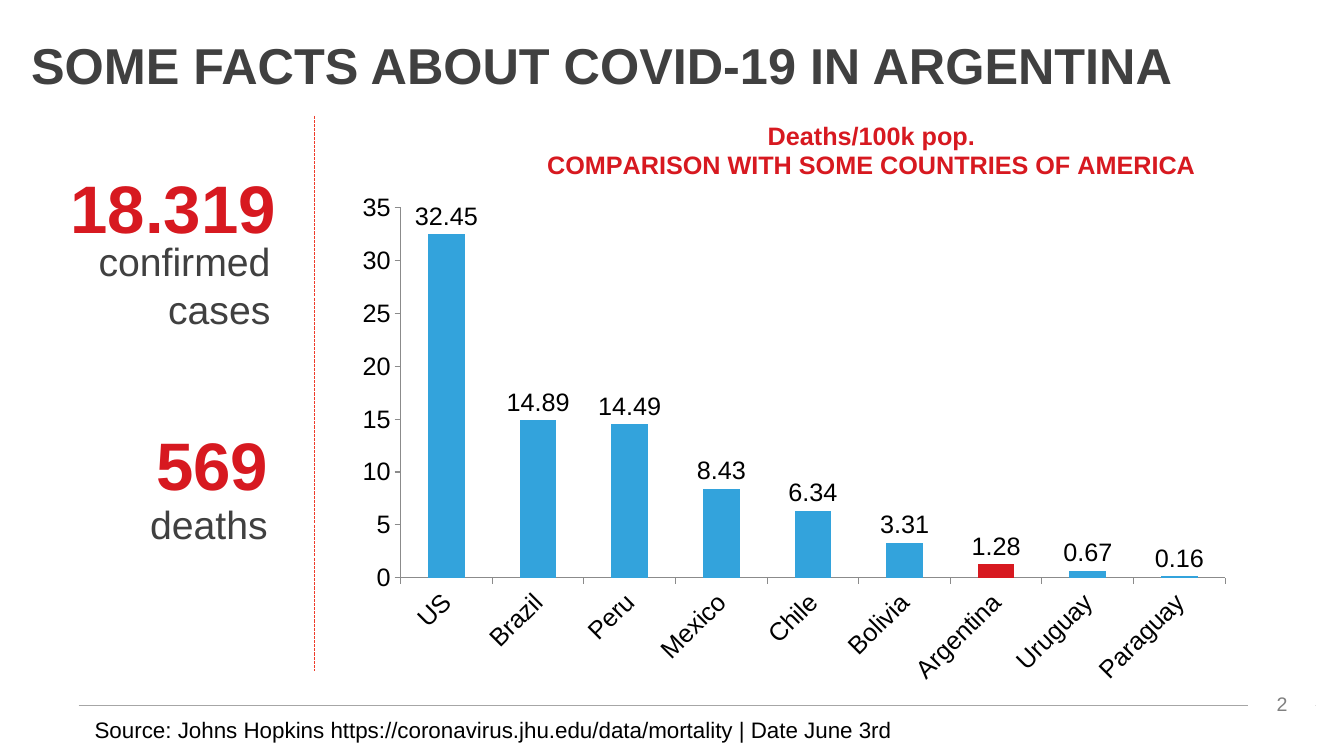
from dataclasses import dataclass
from lxml.etree import SubElement
from pptx import Presentation
from pptx.chart.data import CategoryChartData
from pptx.dml.color import RGBColor
from pptx.enum.chart import XL_CHART_TYPE, XL_LABEL_POSITION, XL_TICK_MARK
from pptx.enum.dml import MSO_LINE
from pptx.enum.shapes import MSO_CONNECTOR, MSO_SHAPE
from pptx.enum.text import MSO_ANCHOR, PP_ALIGN
from pptx.oxml import parse_xml
from pptx.oxml.ns import nsdecls, qn
from pptx.util import Inches, Pt


@dataclass(frozen=True)
class Theme:
    font: str = "Arial"
    red: str = "D71920"
    blue: str = "33A3DC"
    dark: str = "404040"
    black: str = "000000"
    white: str = "FFFFFF"
    gray: str = "808080"
    rule: str = "A6A6A6"
    axis: str = "8B8B8B"
    dash: str = "EE3C2A"
    head: int = 36
    fact: int = 48
    unit: int = 28
    chart: int = 18
    note: int = 16
    page: int = 14


T = Theme()
RATES = {
    "US": 32.45, "Brazil": 14.89, "Peru": 14.49, "Mexico": 8.43,
    "Chile": 6.34, "Bolivia": 3.31, "Argentina": 1.28,
    "Uruguay": 0.67, "Paraguay": 0.16,
}


def color(code):
    return RGBColor.from_string(code)


def style(font, size, code, bold=False):
    font.name, font.size, font.bold = T.font, Pt(size), bold
    font.color.rgb = color(code)


def write(frame, text, size, code, bold=False, align=PP_ALIGN.LEFT):
    frame.text = text
    frame.paragraphs[0].alignment = align
    style(frame.paragraphs[0].runs[0].font, size, code, bold)


def add_text(slide, box, text, size, code, bold=False, align=PP_ALIGN.LEFT, wrap=False):
    frame = slide.shapes.add_textbox(*map(Inches, box)).text_frame
    frame.word_wrap = wrap
    write(frame, text, size, code, bold, align)


def add_line(slide, start, end, code, dash=None):
    line = slide.shapes.add_connector(
        MSO_CONNECTOR.STRAIGHT, *map(Inches, start + end))
    line.line.color.rgb = color(code)
    line.line.width = Pt(0.75)
    if dash:
        line.line.dash_style = dash
    SubElement(line.element.spPr, qn("a:effectLst"))


def add_facts(slide, box):
    x, y, w, h = box
    # Each count stands above its unit
    add_text(slide, (x, y, 2.27, 0.91), "18.319", T.fact, T.red, True)
    add_text(slide, (x + 0.16, y + 0.71, 2.02, 1.04), "confirmed cases",
             T.unit, T.dark, align=PP_ALIGN.RIGHT, wrap=True)
    add_text(slide, (x + 0.85, y + 2.55, 1.33, 0.91), "569", T.fact, T.red, True)
    add_text(slide, (x + 0.79, y + 3.31, 1.38, 0.57), "deaths", T.unit, T.dark)
    # Divider on the right edge
    add_line(slide, (x + w, y - 0.45), (x + w, y - 0.45 + h), T.dash, MSO_LINE.SQUARE_DOT)


def make_layout(inner="", **sides):
    parts = "".join(f'<c:{key}Mode val="edge"/>' for key in "xy")
    parts += "".join(f'<c:{key} val="{val}"/>' for key, val in sides.items())
    return parse_xml(f'<c:layout {nsdecls("c")}><c:manualLayout>{inner}{parts}'
                     '</c:manualLayout></c:layout>')


def put_layout(parent, index, layout):
    for old in parent.findall(qn("c:layout")):
        parent.remove(old)
    parent.insert(index, layout)


def add_rates(slide, box):
    data = CategoryChartData()
    data.categories = list(RATES)
    data.add_series("Series 1", list(RATES.values()))
    chart = slide.shapes.add_chart(
        XL_CHART_TYPE.COLUMN_CLUSTERED, *map(Inches, box), data).chart
    style(chart.font, T.chart, T.black)
    chart.has_legend = False

    # Title
    chart.has_title = True
    frame = chart.chart_title.text_frame
    frame.text = "Deaths/100k pop.\nCOMPARISON WITH SOME COUNTRIES OF AMERICA"
    for para in frame.paragraphs:
        style(para.runs[0].font, T.chart, T.red, True)
    chart.chart_title.include_in_layout = False

    # Columns
    plot = chart.plots[0]
    plot.gap_width = 150
    plot.vary_by_categories = False
    bars = plot.series[0]
    bars.invert_if_negative = False
    bars.format.fill.solid()
    bars.format.fill.fore_color.rgb = color(T.blue)
    home = bars.points[list(RATES).index("Argentina")].format.fill
    home.solid()
    home.fore_color.rgb = color(T.red)
    labels = bars.data_labels
    labels.show_value = True
    labels.position = XL_LABEL_POSITION.OUTSIDE_END
    style(labels.font, T.chart, T.black)

    # Axes
    for axis in (chart.category_axis, chart.value_axis):
        axis.has_major_gridlines = False
        axis.major_tick_mark = XL_TICK_MARK.OUTSIDE
        axis.minor_tick_mark = XL_TICK_MARK.NONE
        axis.format.line.color.rgb = color(T.axis)
        axis.format.line.width = Pt(0.75)
        style(axis.tick_labels.font, T.chart, T.black)
    scale = chart.value_axis
    scale.minimum_scale, scale.maximum_scale, scale.major_unit = 0, 35, 5

    # Slanted country names
    root = chart.element.find(qn("c:chart"))
    area = root.find(qn("c:plotArea"))
    turn = area.find(qn("c:catAx")).find(qn("c:txPr")).find(qn("a:bodyPr"))
    turn.set("rot", "-2700000")
    turn.set("vert", "horz")

    # Places of title and plot
    put_layout(root.find(qn("c:title")), 1, make_layout(x=0.22, y=0.03))
    put_layout(area, 0, make_layout(
        '<c:layoutTarget val="inner"/>', x=0.06, y=0.18, w=0.92, h=0.62))


def add_foot(slide, box):
    x, y, w, h = box
    add_line(slide, (x, y), (x + w, y), T.rule)
    # Page number covers the end of the rule
    page = slide.shapes.add_shape(
        MSO_SHAPE.RECTANGLE, *map(Inches, (x + w - 0.67, y - 0.18, 0.67, 0.34)))
    page.shadow.inherit = False
    page.fill.solid()
    page.fill.fore_color.rgb = color(T.white)
    page.line.fill.background()
    page.text_frame.vertical_anchor = MSO_ANCHOR.TOP
    write(page.text_frame, "2", T.page, T.gray, align=PP_ALIGN.CENTER)
    # Source
    add_text(slide, (x + 0.06, y + 0.06, 8.21, h),
             "Source: Johns Hopkins https://coronavirus.jhu.edu/data/mortality"
             " | Date June 3rd", T.note, T.black)


def main():
    deck = Presentation()
    deck.slide_width, deck.slide_height = Inches(13.33), Inches(7.5)
    slide = deck.slides.add_slide(deck.slide_layouts[6])
    add_foot(slide, (0.78, 7, 12.27, 0.37))
    add_rates(slide, (3.44, 0.99, 8.89, 5.93))
    add_text(slide, (0.21, 0.29, 13.1, 0.71), "SOME FACTS ABOUT COVID-19 IN ARGENTINA",
             T.head, T.dark, True, wrap=True)
    add_facts(slide, (0.6, 1.6, 2.52, 5.51))
    deck.save("out.pptx")


if __name__ == "__main__":
    main()
